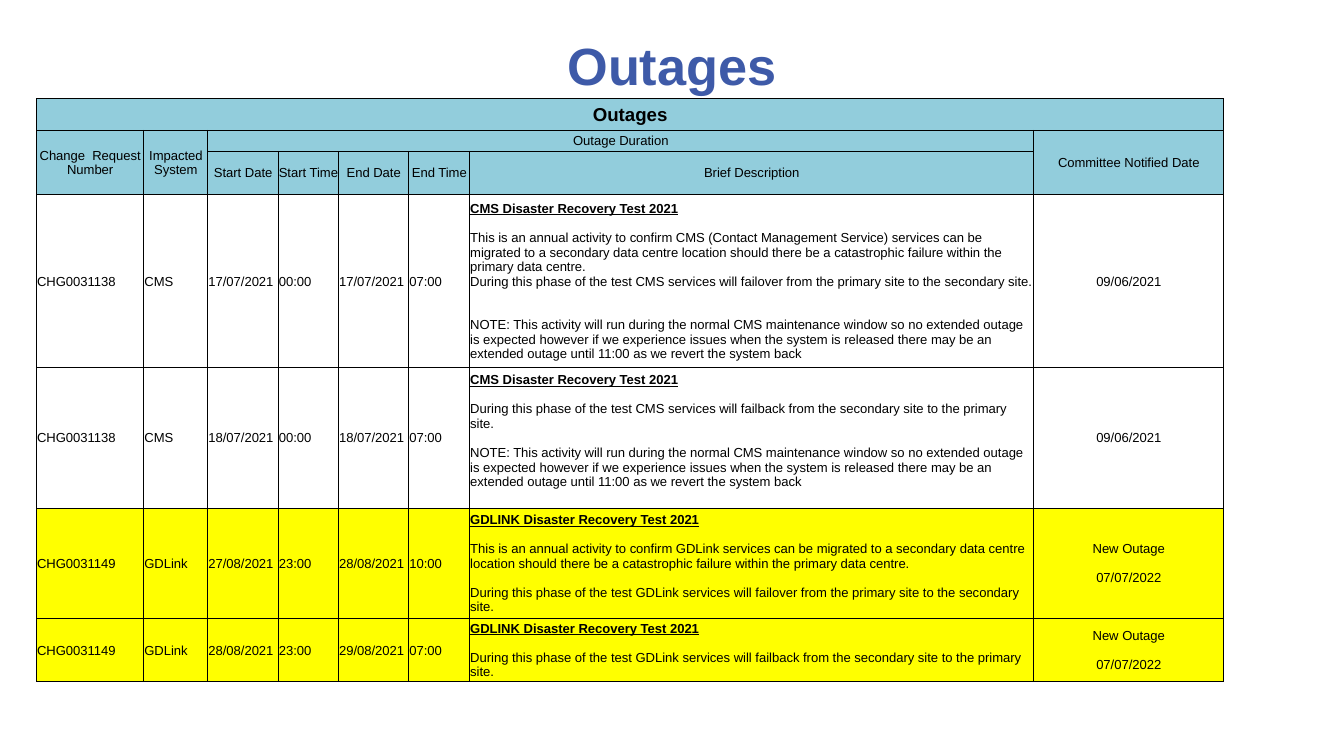
import copy
import pptx
import pptx.dml.color
import pptx.enum.text
import pptx.oxml
import pptx.oxml.ns
import pptx.util
from dataclasses import dataclass

Cm = pptx.util.Cm
Pt = pptx.util.Pt
Align = pptx.enum.text.PP_ALIGN
MIDDLE = pptx.enum.text.MSO_ANCHOR.MIDDLE


@dataclass(frozen=True)
class Theme:
    font: str = "Arial"
    title: str = "3E5AA8"
    ink: str = "000000"
    header: str = "92CDDC"
    new_outage: str = "FFFF00"
    title_size: float = 28
    banner_size: float = 10
    body_size: float = 7
    line_gap: float = 7.8  # one line of body text
    border: float = 0.5


THEME = Theme()

COLUMN_WIDTHS = [2.03, 1.21, 1.33, 1.14, 1.33, 1.15, 10.66, 3.59]
ROW_HEIGHTS = [0.6, 0.4, 0.82, 3.04, 2.53, 1.97, 1.14]

# Heading cells: row, column, rows spanned, columns spanned, label
HEADINGS = [
    (1, 0, 2, 1, "Change  Request Number"),
    (1, 1, 2, 1, "Impacted System"),
    (1, 2, 1, 5, "Outage Duration"),
    (1, 7, 2, 1, "Committee Notified Date"),
    (2, 2, 1, 1, "Start Date"),
    (2, 3, 1, 1, "Start Time"),
    (2, 4, 1, 1, "End Date"),
    (2, 5, 1, 1, "End Time"),
    (2, 6, 1, 1, "Brief Description"),
]

CMS_TEST = "CMS Disaster Recovery Test 2021\n\n"
LINK_TEST = "GDLINK Disaster Recovery Test 2021\n\n"
CMS_NOTE = (
    "NOTE: This activity will run during the normal CMS maintenance window so no "
    "extended outage is expected however if we experience issues when the system is "
    "released there may be an extended outage until 11:00 as we revert the system back"
)

# Each outage: short fields, test name, description, notified, lines free below
OUTAGES = [
    (["CHG0031138", "CMS", "17/07/2021", "00:00", "17/07/2021", "07:00"], CMS_TEST,
     "This is an annual activity to confirm CMS (Contact Management Service) services "
     "can be migrated to a secondary data centre location should there be a "
     "catastrophic failure within the primary data centre.\n"
     "During this phase of the test CMS services will failover from the primary site "
     "to the secondary site. \n\n" + CMS_NOTE,
     "09/06/2021", 0),
    (["CHG0031138", "CMS", "18/07/2021", "00:00", "18/07/2021", "07:00"], CMS_TEST,
     "During this phase of the test CMS services will failback from the secondary "
     "site to the primary site.\n\n" + CMS_NOTE,
     "09/06/2021", 1),
    (["CHG0031149", "GDLink", "27/08/2021", "23:00", "28/08/2021", "10:00"], LINK_TEST,
     "This is an annual activity to confirm GDLink services can be migrated to a "
     "secondary data centre location should there be a catastrophic failure within "
     "the primary data centre.\n\n"
     "During this phase of the test GDLink services will failover from the primary "
     "site to the secondary site.",
     "New Outage\n\n07/07/2022", 0),
    (["CHG0031149", "GDLink", "28/08/2021", "23:00", "29/08/2021", "07:00"], LINK_TEST,
     "During this phase of the test GDLink services will failback from the secondary "
     "site to the primary site.",
     "New Outage\n\n07/07/2022", 0),
]


def rgb(value):
    return pptx.dml.color.RGBColor.from_string(value)


def add_run(paragraph, text, size, color, bold, underline):
    run = paragraph.add_run()
    run.text = text
    font = run.font
    font.name, font.size = THEME.font, Pt(size)
    font.bold, font.underline = bold, underline
    font.color.rgb = rgb(color)
    return run


def write(paragraph, text, size=THEME.body_size, color=THEME.ink, bold=False,
          underline=False, align=Align.LEFT):
    """Add text run by run; line breaks take the size of the run before."""
    paragraph.alignment = align
    run = None
    for number, line in enumerate(text.split("\n")):
        if number:
            paragraph.add_line_break()
            paragraph._p[-1].append(copy.deepcopy(run._r.rPr))
        if line:
            run = add_run(paragraph, line, size, color, bold, underline)


def add_title(slide):
    box = slide.shapes.add_textbox(Cm(1.27), Cm(0.33), Cm(22.86), Cm(1.78))
    frame = box.text_frame
    frame.word_wrap = True
    frame.vertical_anchor = MIDDLE
    write(frame.paragraphs[0], "Outages", THEME.title_size, THEME.title,
          bold=True, align=Align.CENTER)


def format_cell(cell, fill):
    cell.margin_left = cell.margin_right = cell.margin_top = Cm(0.01)
    cell.margin_bottom = 0
    cell.vertical_anchor = MIDDLE
    # Borders come before the fill in the cell properties
    properties = cell._tc.get_or_add_tcPr()
    for side in ("lnL", "lnR", "lnT", "lnB"):
        properties.append(pptx.oxml.parse_xml(
            f'<a:{side} {pptx.oxml.ns.nsdecls("a")} w="{int(Pt(THEME.border))}">'
            f'<a:solidFill><a:srgbClr val="{THEME.ink}"/></a:solidFill></a:{side}>'))
    if fill:
        cell.fill.solid()
        cell.fill.fore_color.rgb = rgb(fill)
    else:
        cell.fill.background()


def size_paragraph_ends(grid):
    """Keep the paragraph ends from making rows taller than their text."""
    for cell in grid.iter_cells():
        for paragraph in cell.text_frame.paragraphs:
            paragraph._p.append(pptx.oxml.parse_xml(
                f'<a:endParaRPr {pptx.oxml.ns.nsdecls("a")} '
                f'sz="{THEME.body_size * 100}"/>'))


def add_grid(slide):
    frame = slide.shapes.add_table(
        len(ROW_HEIGHTS), len(COLUMN_WIDTHS), Cm(0.69), Cm(1.86),
        Cm(sum(COLUMN_WIDTHS)), Cm(sum(ROW_HEIGHTS)))
    grid = frame.table
    grid.first_row = grid.horz_banding = False
    for column, width in zip(grid.columns, COLUMN_WIDTHS):
        column.width = Cm(width)
    for row, height in zip(grid.rows, ROW_HEIGHTS):
        row.height = Cm(height)
    fills = [THEME.header] * 3 + [None] * 2 + [THEME.new_outage] * 2
    for row, fill in zip(grid.rows, fills):
        for cell in row.cells:
            format_cell(cell, fill)
    return grid


def fill_heading(grid, row, column, rows, columns, label, **style):
    cell = grid.cell(row, column)
    if rows * columns > 1:
        cell.merge(grid.cell(row + rows - 1, column + columns - 1))
    write(cell.text_frame.paragraphs[0], label, align=Align.CENTER, **style)


def fill_outage(grid, row, fields, test, description, notified, lines_below):
    for column, field in enumerate(fields):
        write(grid.cell(row, column).text_frame.paragraphs[0], field)

    brief = grid.cell(row, 6)
    brief.margin_bottom = Pt(lines_below * THEME.line_gap)
    summary = brief.text_frame.paragraphs[0]
    write(summary, test, bold=True, underline=True)
    write(summary, description)

    write(grid.cell(row, 7).text_frame.paragraphs[0], notified, align=Align.CENTER)


def main():
    deck = pptx.Presentation()
    deck.slide_width, deck.slide_height = Cm(25.4), Cm(14.28)
    slide = deck.slides.add_slide(deck.slide_layouts[6])

    add_title(slide)

    # Table headings
    grid = add_grid(slide)
    fill_heading(grid, 0, 0, 1, 8, "Outages", size=THEME.banner_size, bold=True)
    for heading in HEADINGS:
        fill_heading(grid, *heading)

    # One row for each outage
    for row, outage in enumerate(OUTAGES, start=3):
        fill_outage(grid, row, *outage)
    size_paragraph_ends(grid)

    deck.save("out.pptx")


if __name__ == "__main__":
    main()
